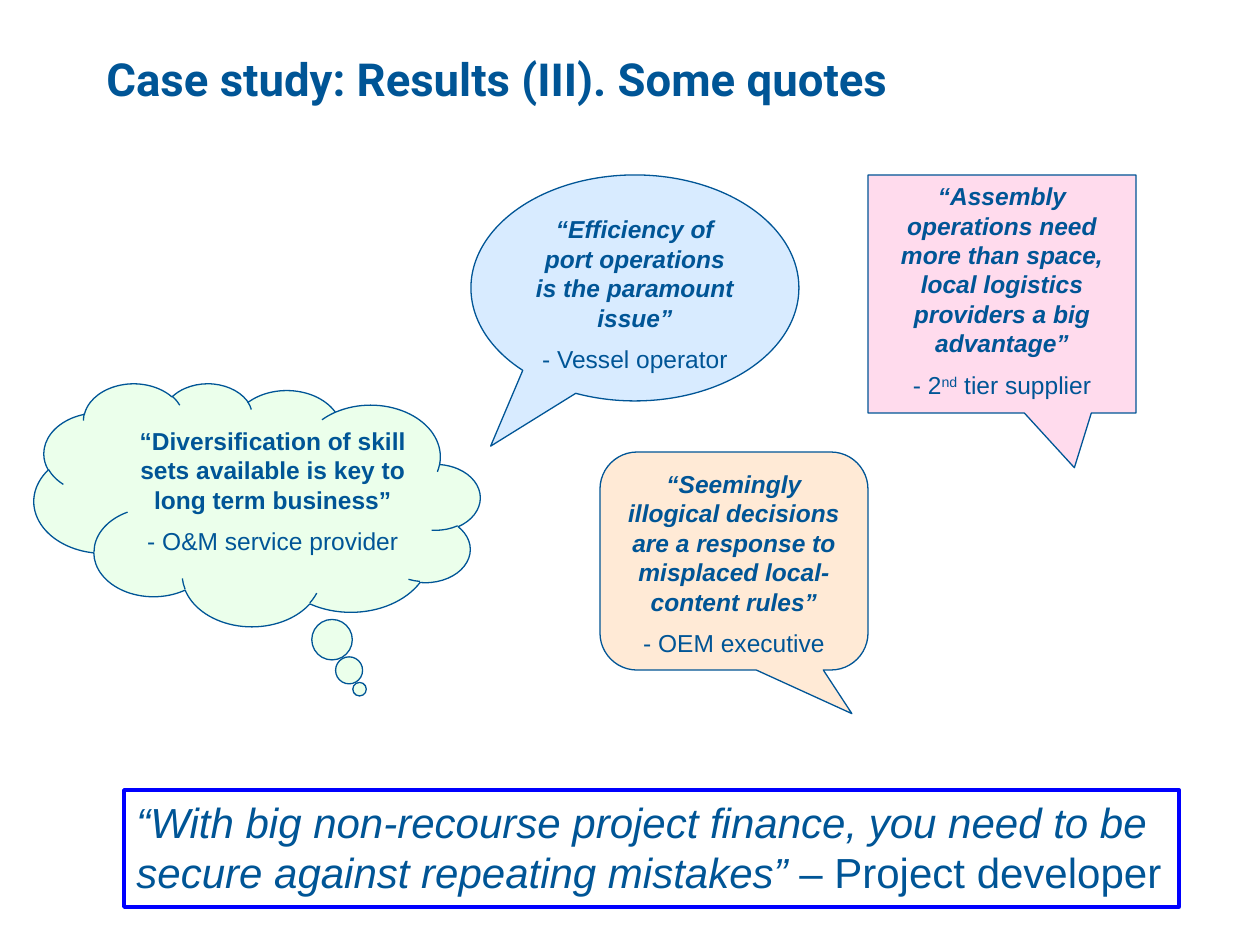
from pptx import Presentation
from pptx.dml.color import RGBColor
from pptx.enum.shapes import MSO_SHAPE
from pptx.enum.text import MSO_ANCHOR, PP_ALIGN
from pptx.oxml.ns import qn
from pptx.util import Emu, Pt
from lxml.etree import SubElement

SCALE = 914400 / 126
BLUE = "005596"


def px(num):
    return Emu(round(num * SCALE))


def color(code):
    return RGBColor.from_string(code)


class Deck:
    font = "Arial"
    ink = BLUE

    def __init__(self, wide, high):
        self.prs = Presentation()
        self.prs.slide_width, self.prs.slide_height = px(wide), px(high)
        self.slide = self.prs.slides.add_slide(self.prs.slide_layouts[6])

    def run(self, para, text, size, bold=False, slant=False, font=None, base=0):
        run = para.add_run()
        run.text = text
        face = run.font
        face.name, face.size = font or self.font, Pt(size)
        face.bold, face.italic = bold, slant
        face.color.rgb = color(self.ink)
        if base:
            run._r.get_or_add_rPr().set("baseline", str(base * 1000))

    def title(self, box, text):
        frame = self.slide.shapes.add_textbox(*map(px, box)).text_frame
        frame.word_wrap = True
        self.run(frame.paragraphs[0], text, 26, bold=True, font="Roboto")

    def shape(self, kind, box, line, width):
        shape = self.slide.shapes.add_shape(kind, *map(px, box))
        shape.shadow.inherit = False
        shape.fill.background()
        shape.line.color.rgb = color(line)
        shape.line.width = Pt(width)
        shape.text_frame.vertical_anchor = MSO_ANCHOR.TOP
        return shape

    def bubble(self, kind, box, tail, fill, alpha, quote, source,
               slant=True, flip=False):
        shape = self.shape(kind, box, BLUE, 0.75)
        for spot, value in enumerate(tail):
            shape.adjustments[spot] = value
        if flip:
            shape._element.spPr.find(qn("a:xfrm")).set("flipH", "1")
        # Tinted see-through fill
        shape.fill.solid()
        shape.fill.fore_color.rgb = color(fill)
        tint = shape._element.spPr.find(qn("a:solidFill"))[0]
        SubElement(tint, qn("a:alpha")).set("val", str(alpha * 1000))
        # Quote, then who said it
        frame = shape.text_frame
        frame.word_wrap = True
        first, last = frame.paragraphs[0], frame.add_paragraph()
        first.alignment = last.alignment = PP_ALIGN.CENTER
        last.space_before = Pt(7)
        self.run(first, quote, 14, bold=True, slant=slant)
        for text, base in source:
            self.run(last, text, 14, base=base)

    def banner(self, box, lines, source):
        shape = self.shape(MSO_SHAPE.RECTANGLE, box, "0000FF", 2)
        shape.text_frame.word_wrap = False
        para = shape.text_frame.paragraphs[0]
        para.alignment = PP_ALIGN.LEFT
        for spot, text in enumerate(lines):
            if spot:
                para.add_line_break()
            self.run(para, text, 24, slant=True)
        self.run(para, source, 24)


def main():
    deck = Deck(1260, 945)
    deck.title((94, 45, 1134, 158), "Case study: Results (III). Some quotes")

    # Closing quote
    deck.banner((124, 790, 1055, 117),
                ["“With big non-recourse project finance, you need to be",
                 "secure against repeating mistakes” "],
                "– Project developer")

    # Speech bubbles
    deck.bubble(MSO_SHAPE.OVAL_CALLOUT, (471, 175, 328, 226),
                (-0.44, 0.7), "99CCFF", 38,
                "“Efficiency of port operations is the paramount issue”",
                [("- Vessel operator", 0)])
    deck.bubble(MSO_SHAPE.CLOUD_CALLOUT, (34, 383, 446, 243),
                (-0.23, 0.76), "CCFFCC", 38,
                "“Diversification of skill sets available is key to "
                "long term business”",
                [("- O&M service provider", 0)], slant=False, flip=True)
    deck.bubble(MSO_SHAPE.ROUNDED_RECTANGULAR_CALLOUT, (600, 452, 268, 218),
                (0.44, 0.7, 0.17), "FFCC99", 40,
                "“Seemingly illogical decisions are a response to "
                "misplaced local-content rules”",
                [("- OEM executive", 0)])
    deck.bubble(MSO_SHAPE.RECTANGULAR_CALLOUT, (868, 175, 268, 238),
                (0.27, 0.73), "FF99CC", 35,
                "“Assembly operations need more than space, "
                "local logistics providers a big advantage”",
                [("- 2", 0), ("nd", 30), (" tier supplier", 0)])

    deck.prs.save("out.pptx")


if __name__ == "__main__":
    main()
